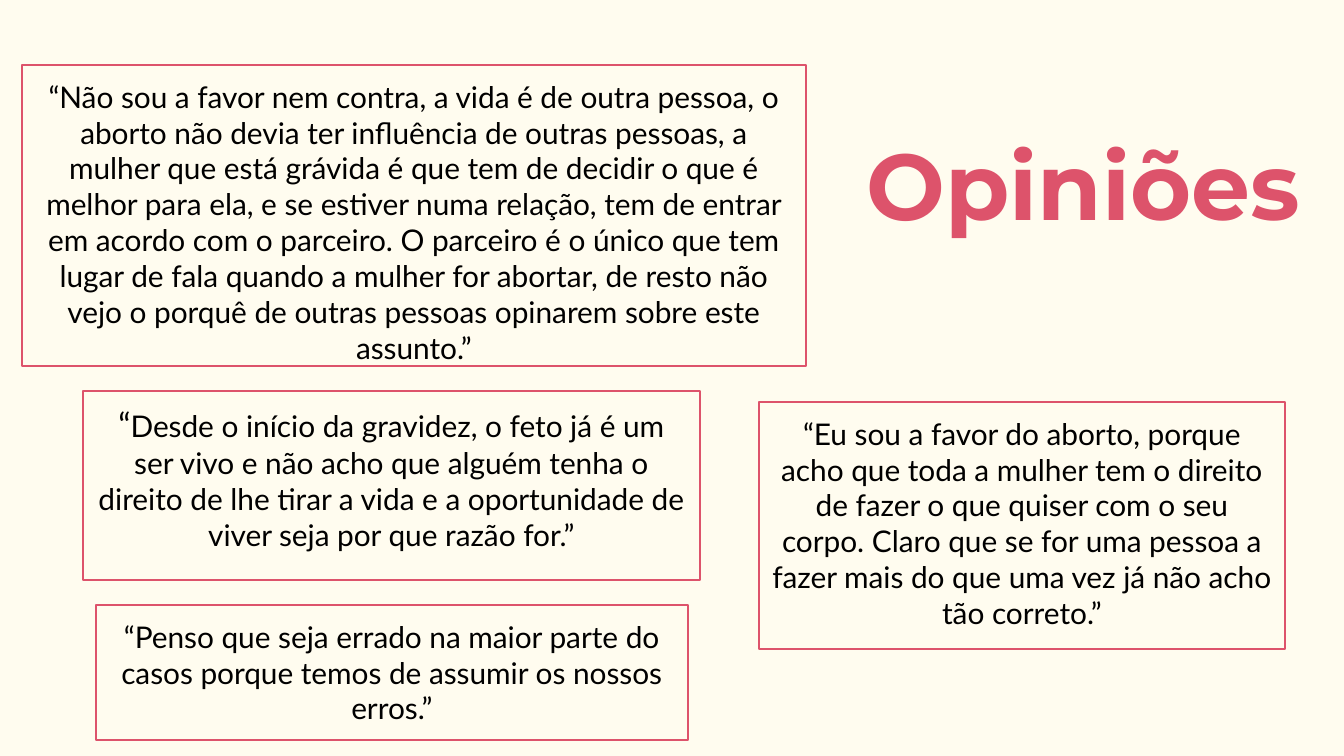
"""Build the "Opiniões" slide: four framed quotes beside a large title."""

from pptx import Presentation
from pptx.dml.color import RGBColor as Rgb
from pptx.enum.shapes import MSO_SHAPE as Shape
from pptx.enum.text import MSO_ANCHOR as Anchor, MSO_AUTO_SIZE as AutoSize, PP_ALIGN as Align
from pptx.util import Emu, Inches, Pt

COLORS = {"cream": "FFFCEF", "rose": "DD536B", "ink": "000000"}
PX = Inches(10) / 1344


def px(*lengths):
    return [Emu(round(length * PX)) for length in lengths]


def write(holder, *pieces, font="Lato", color="ink", bold=False, align=Align.CENTER):
    frame = holder.text_frame
    frame.word_wrap = True
    frame.auto_size = AutoSize.NONE
    frame.vertical_anchor = Anchor.TOP
    frame.margin_left = frame.margin_right = Inches(0.1)
    frame.margin_top = frame.margin_bottom = Inches(0.1)
    line = frame.paragraphs[0]
    line.alignment = align
    for words, size in pieces:
        run = line.add_run()
        run.text = words
        run.font.name = font
        run.font.size = Pt(size)
        run.font.bold = bold
        run.font.color.rgb = Rgb.from_string(COLORS[color])


deck = Presentation()
deck.slide_width, deck.slide_height = px(1344, 756)
slide = deck.slides.add_slide(deck.slide_layouts[5])
slide.background.fill.solid()
slide.background.fill.fore_color.rgb = Rgb.from_string(COLORS["cream"])

quotes = [
    ((22, 65, 784, 301), [
        ("“Não sou a favor nem contra, a vida é de outra pessoa, o aborto não devia ter "
         "influência de outras pessoas, a mulher que está grávida é que tem de decidir o que é "
         "melhor para ela, e se estiver numa relação, tem de entrar em acordo com o parceiro. "
         "O parceiro é o único que tem lugar de fala quando a mulher for abortar, de resto não "
         "vejo o porquê de outras pessoas opinarem sobre este assunto.”", 16)]),
    ((759, 402, 526, 247), [
        ("“Eu sou a favor do aborto, porque acho que toda a mulher tem o direito de fazer o que "
         "quiser com o seu corpo. Claro que se for uma pessoa a fazer mais do que uma vez já não "
         "acho tão correto.”", 16)]),
    ((83, 391, 617, 189), [
        ("“", 18),
        ("Desde o início da gravidez, o feto já é um ser vivo e não acho que alguém tenha o "
         "direito de lhe tirar a vida e a oportunidade de viver seja por que razão for.”", 16)]),
    ((96, 605, 592, 135), [
        ("“Penso que seja errado na maior parte do casos porque temos de assumir os nossos "
         "erros.”", 16)]),
]
for place, pieces in quotes:
    quote = slide.shapes.add_shape(Shape.RECTANGLE, *px(*place))
    quote.shadow.inherit = False
    quote.fill.background()
    quote.line.color.rgb = Rgb.from_string(COLORS["rose"])
    quote.line.width = Pt(0.75)
    write(quote, *pieces)

heading = slide.shapes.title
heading.left, heading.top, heading.width, heading.height = px(853, 114, 475, 134)
write(heading, ("Opiniões", 50), font="Montserrat", color="rose", bold=True, align=Align.LEFT)

deck.save("out.pptx")
